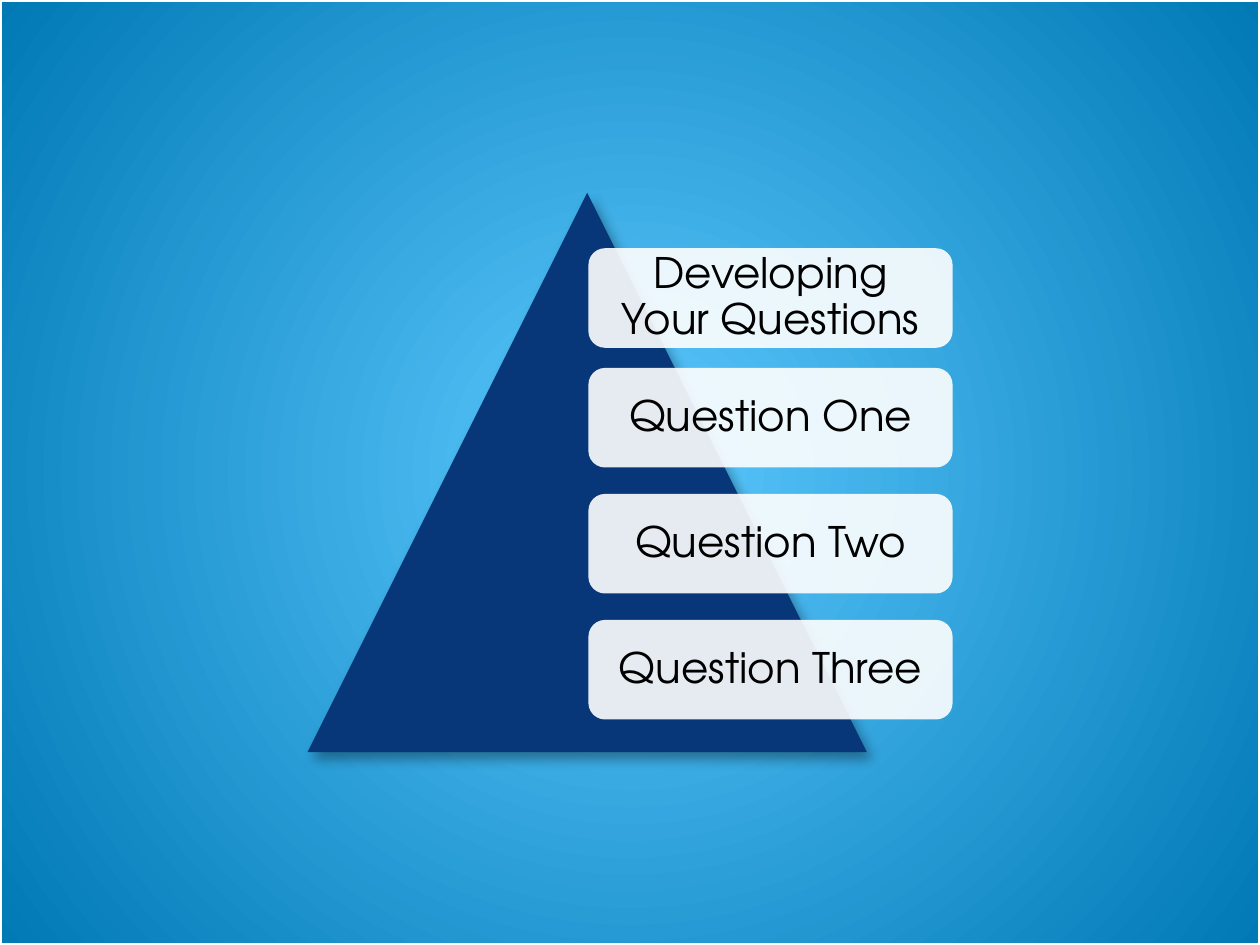
import pptx
import pptx.dml.color
import pptx.enum.shapes
import pptx.enum.text
import pptx.oxml
import pptx.oxml.ns
import pptx.util
from pptx.util import Inches

RGBColor = pptx.dml.color.RGBColor
MSO_SHAPE = pptx.enum.shapes.MSO_SHAPE

WHITE = RGBColor(0xFF, 0xFF, 0xFF)
BLACK = RGBColor(0x00, 0x00, 0x00)
NAVY = RGBColor(0x07, 0x37, 0x79)
SKY_BLUE = RGBColor(0x5D, 0xC9, 0xFF)
DEEP_BLUE = RGBColor(0x00, 0x79, 0xB5)
FONT_NAME = "TeX Gyre Adventor"

BOXES = [
    (1.97, "Developing Your Questions"),
    (2.92, "Question One"),
    (3.92, "Question Two"),
    (4.92, "Question Three"),
]


def parse_drawing(xml):
    """Parse one DrawingML element, given without its namespace declaration."""
    tag, rest = xml.split(" ", 1)
    return pptx.oxml.parse_xml(f"{tag} {pptx.oxml.ns.nsdecls('a')} {rest}")


def set_radial_background(slide):
    fill = slide.background.fill
    fill.gradient()
    for stop, color, position in zip(fill.gradient_stops, (SKY_BLUE, DEEP_BLUE), (0, 1)):
        stop.color.rgb = color
        stop.position = position
    gradient = slide.element.find(".//" + pptx.oxml.ns.qn("a:gradFill"))
    linear = gradient.find(pptx.oxml.ns.qn("a:lin"))
    gradient.replace(linear, parse_drawing(
        '<a:path path="circle"><a:fillToRect l="50000" t="50000" r="50000" b="50000"/></a:path>'))


def add_plain_shape(slide, kind, left, top, width, height, color=None):
    shape = slide.shapes.add_shape(
        kind, Inches(left), Inches(top), Inches(width), Inches(height))
    shape.shadow.inherit = False
    shape.line.fill.background()
    if color is None:
        shape.fill.background()
    else:
        shape.fill.solid()
        shape.fill.fore_color.rgb = color
    return shape


def add_frame(slide):
    frame = add_plain_shape(slide, MSO_SHAPE.RECTANGLE, 0, 0, 10, 7.5)
    frame.line.color.rgb = WHITE
    frame.line.width = pptx.util.Pt(2)


def add_triangle(slide):
    triangle = add_plain_shape(
        slide, MSO_SHAPE.ISOSCELES_TRIANGLE, 2.44, 1.53, 4.44, 4.44, NAVY)
    effects = triangle.element.spPr.find(pptx.oxml.ns.qn("a:effectLst"))
    blur, distance = pptx.util.Pt(7), pptx.util.Pt(5)
    effects.append(parse_drawing(
        f'<a:outerShdw blurRad="{blur}" dist="{distance}" dir="{50 * 60000}" '
        'algn="tl" rotWithShape="0">'
        f'<a:srgbClr val="{BLACK}"><a:alpha val="35000"/></a:srgbClr></a:outerShdw>'))


def add_question_box(slide, top, text):
    box = add_plain_shape(
        slide, MSO_SHAPE.ROUNDED_RECTANGLE, 4.67, top, 2.89, 0.79, WHITE)
    color = box.element.spPr.find(".//" + pptx.oxml.ns.qn("a:srgbClr"))
    color.append(parse_drawing('<a:alpha val="90000"/>'))

    frame = box.text_frame
    frame.word_wrap = True
    frame.vertical_anchor = pptx.enum.text.MSO_ANCHOR.MIDDLE
    frame.margin_left = frame.margin_right = Inches(0.1)
    frame.margin_top = frame.margin_bottom = Inches(0.1)
    paragraph = frame.paragraphs[0]
    paragraph.alignment = pptx.enum.text.PP_ALIGN.CENTER
    paragraph.line_spacing = 0.9
    run = paragraph.add_run()
    run.text = text
    run.font.name = FONT_NAME
    run.font.size = pptx.util.Pt(24)
    run.font.color.rgb = BLACK


def main():
    presentation = pptx.Presentation()
    presentation.slide_width = Inches(10)
    presentation.slide_height = Inches(7.5)
    slide = presentation.slides.add_slide(presentation.slide_layouts[6])
    set_radial_background(slide)
    add_frame(slide)
    add_triangle(slide)
    for top, text in BOXES:
        add_question_box(slide, top, text)
    presentation.save("out.pptx")


if __name__ == "__main__":
    main()
